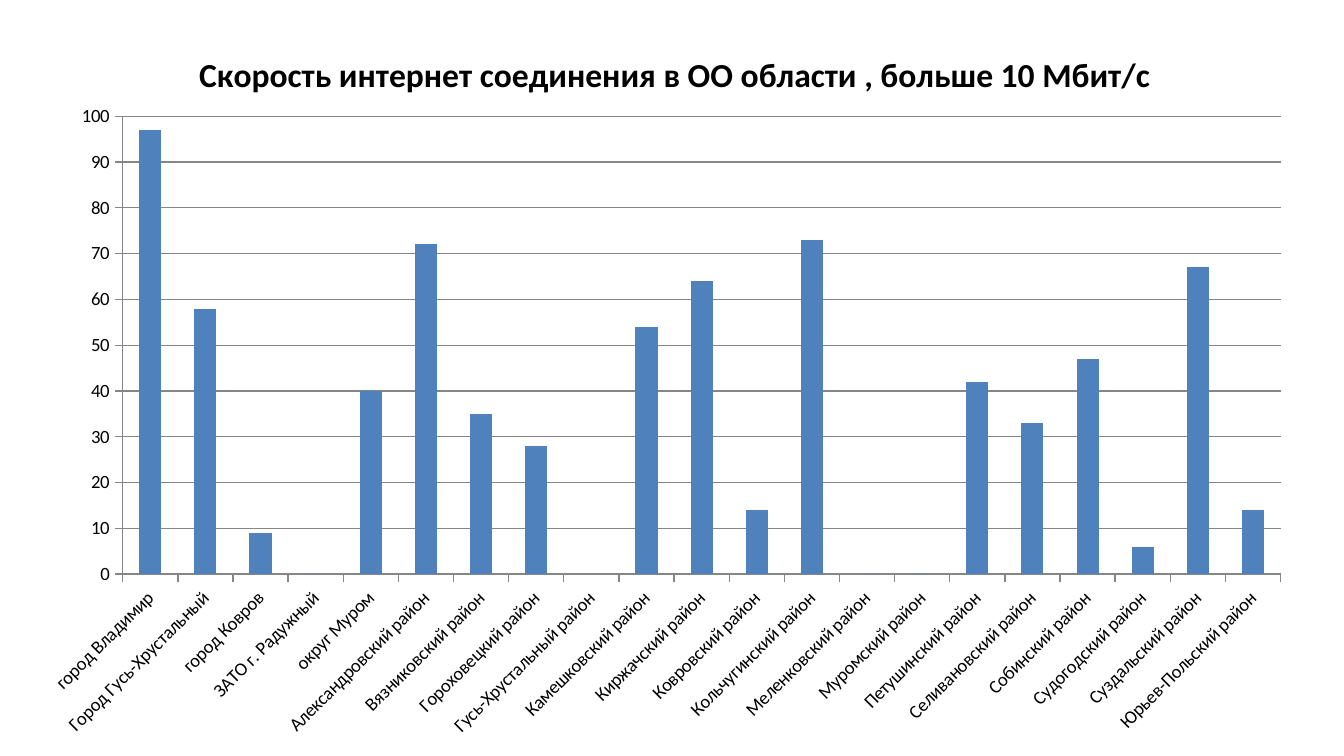
from pptx import Presentation
from pptx.chart.data import CategoryChartData
from pptx.dml.color import RGBColor
from pptx.enum.chart import XL_CHART_TYPE as ChartType, XL_TICK_MARK as TickMark
from pptx.oxml import parse_xml
from pptx.oxml.ns import nsdecls, qn
from pptx.util import Emu, Pt

PX = 9525
FONT = "Calibri"
COLORS = {"text": "000000", "bar": "4F81BD", "line": "868686"}
TITLE = "Скорость интернет соединения в ОО области , больше 10 Мбит/с"
SPEEDS = {
    "город Владимир": 97,
    "Город Гусь-Хрустальный": 58,
    "город Ковров": 9,
    "ЗАТО г. Радужный": 0,
    "округ Муром": 40,
    "Александровский район": 72,
    "Вязниковский район": 35,
    "Гороховецкий район": 28,
    "Гусь-Хрустальный район": 0,
    "Камешковский район": 54,
    "Киржачский район": 64,
    "Ковровский район": 14,
    "Кольчугинский район": 73,
    "Меленковский район": 0,
    "Муромский район": 0,
    "Петушинский район": 42,
    "Селивановский район": 33,
    "Собинский район": 47,
    "Судогодский район": 6,
    "Суздальский район": 67,
    "Юрьев-Польский район": 14,
}


def px(length):
    """Turn whole pixels into EMU."""
    return Emu(length * PX)


def color(name):
    """Look up a named colour."""
    return RGBColor.from_string(COLORS[name])


def style_font(font, size, bold=False):
    """Set the face, size, weight and colour of a font."""
    font.name, font.size, font.bold = FONT, Pt(size), bold
    font.color.rgb = color("text")


def style_line(line):
    """Give an axis or gridline its thin grey stroke."""
    line.color.rgb = color("line")
    line.width = Pt(0.75)


def place_part(part, position, **fractions):
    """Place a chart part by fractions of the chart area."""
    old = part.find(qn("c:layout"))
    if old is not None:
        part.remove(old)
    target = '<c:layoutTarget val="inner"/>' if "w" in fractions else ""
    modes = "".join(f'<c:{key}Mode val="edge"/>' for key in "xy")
    values = "".join(f'<c:{key} val="{value}"/>' for key, value in fractions.items())
    part.insert(position, parse_xml(
        f'<c:layout {nsdecls("c")}><c:manualLayout>{target}{modes}{values}'
        "</c:manualLayout></c:layout>"))


def style_axis(axis):
    """Set the ticks, labels and line of an axis."""
    axis.major_tick_mark = TickMark.OUTSIDE
    axis.minor_tick_mark = TickMark.NONE
    style_font(axis.tick_labels.font, 10)
    style_line(axis.format.line)


def add_title(chart):
    """Add the bold chart title."""
    frame = chart.chart_title.text_frame
    frame.text = TITLE
    style_font(frame.paragraphs[0].font, 18, bold=True)
    place_part(chart.chart_title._element, 1, x=0.13, y=0.04)


def add_speed_chart(page):
    """Add the column chart of connection speeds."""
    data = CategoryChartData(number_format="0")
    data.categories = list(SPEEDS)
    data.add_series("Series 1", list(SPEEDS.values()))
    chart = page.shapes.add_chart(
        ChartType.COLUMN_CLUSTERED, px(19), px(11), px(915), px(526), data).chart
    style_font(chart.font, 10)
    chart.has_legend = False
    add_title(chart)

    plot = chart.plots[0]
    plot.gap_width = 150
    plot.vary_by_categories = False
    fill = plot.series[0].format.fill
    fill.solid()
    fill.fore_color.rgb = color("bar")

    districts, speeds = chart.category_axis, chart.value_axis
    for axis in (districts, speeds):
        style_axis(axis)
    districts.tick_labels.font._element.getparent().getparent().getparent().find(
        qn("a:bodyPr")).set("rot", "-2700000")
    speeds.minimum_scale, speeds.maximum_scale, speeds.major_unit = 0, 100, 10
    speeds.tick_labels.number_format = "0"
    speeds.tick_labels.number_format_is_linked = False
    speeds.has_major_gridlines = True
    style_line(speeds.major_gridlines.format.line)
    place_part(chart._chartSpace.chart.plotArea, 0, x=0.075, y=0.137, w=0.904, h=0.622)


def main():
    """Build and save the deck."""
    deck = Presentation()
    deck.slide_width, deck.slide_height = px(960), px(540)
    page = deck.slides.add_slide(deck.slide_layouts[6])
    add_speed_chart(page)
    deck.save("out.pptx")


if __name__ == "__main__":
    main()
